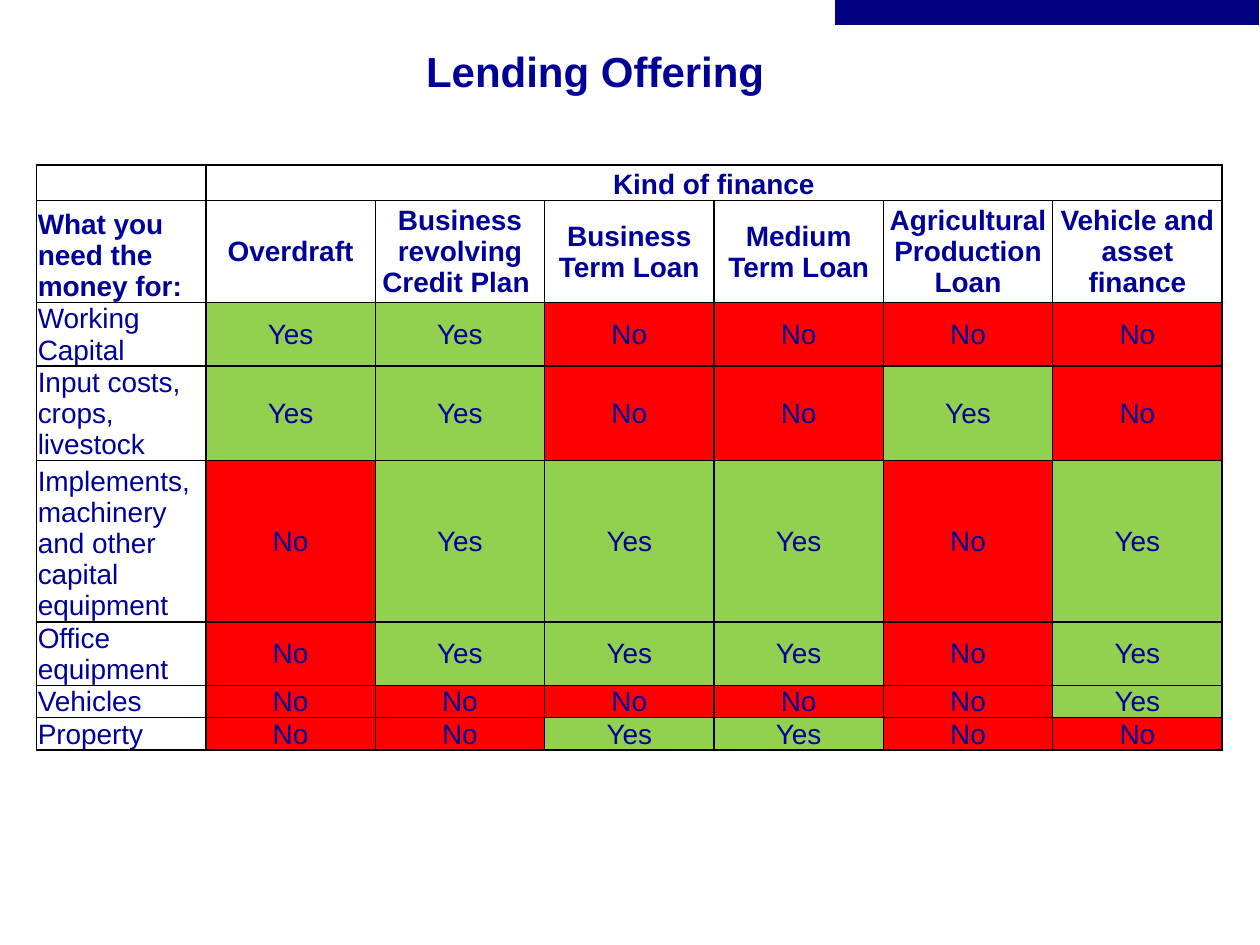
from lxml.etree import SubElement
from pptx import Presentation
from pptx.dml.color import RGBColor
from pptx.enum.shapes import MSO_SHAPE as Preset
from pptx.enum.text import MSO_ANCHOR as Anchor, PP_ALIGN as Align
from pptx.oxml.ns import qn
from pptx.util import Pt

COLORS = {"text": "000099", "bar": "000080", "white": "FFFFFF",
          "border": "000000", "Yes": "92D050", "No": "FF0000"}
COLUMN_WIDTH = 96.8
ROW_HEIGHTS = [18.7, 58.3, 23.8, 46.8, 92.2, 35.3, 14.4, 14.4]
MARGINS = {"margin_left": 0.7, "margin_right": 0.7, "margin_top": 0.7, "margin_bottom": 0}
PRODUCTS = ["Overdraft", "Business revolving Credit Plan ", "Business Term Loan",
            "Medium Term Loan", "Agricultural Production Loan", "Vehicle and asset finance"]
# Each need, with one Y or N per product
NEEDS = {
    "Working Capital": "YYNNNN",
    "Input costs, crops, livestock": "YYNNYN",
    "Implements, machinery and other capital equipment": "NYYYNY",
    "Office equipment": "NYYYNY",
    "Vehicles": "NNNNNY",
    "Property": "NNYYNN",
}
ANSWERS = {"Y": "Yes", "N": "No"}


def color(name):
    return RGBColor.from_string(COLORS[name])


def write(para, text, size, bold, align):
    para.alignment = align
    span = para.add_run()
    span.text = text
    for name, value in {"name": "Arial", "size": Pt(size), "bold": bold}.items():
        setattr(span.font, name, value)
    span.font.color.rgb = color("text")


def add_bar(page):
    bar = page.shapes.add_shape(Preset.RECTANGLE, Pt(476.6), Pt(-1.4), Pt(243.4), Pt(15.8))
    bar.shadow.inherit = False
    bar.fill.solid()
    bar.fill.fore_color.rgb = color("bar")
    bar.line.color.rgb = color("white")
    bar.line.width = Pt(0.75)


def set_title(page, text):
    box = page.shapes.title
    place = {"left": 123.8, "top": 21.6, "width": 432.7, "height": 37.4}
    for name, value in place.items():
        setattr(box, name, Pt(value))
    box.text_frame.vertical_anchor = Anchor.MIDDLE
    write(box.text_frame.paragraphs[0], text, 24, True, Align.CENTER)


def add_borders(cell):
    properties = cell._tc.get_or_add_tcPr()
    for side in ("lnL", "lnR", "lnT", "lnB"):
        line = SubElement(properties, qn(f"a:{side}"), w=str(Pt(1)))
        fill = SubElement(line, qn("a:solidFill"))
        SubElement(fill, qn("a:srgbClr"), val=COLORS["border"])


def fill_cell(cell, text, bold, align, anchor):
    for name, value in MARGINS.items():
        setattr(cell, name, Pt(value))
    cell.vertical_anchor = anchor
    add_borders(cell)
    if text in COLORS:
        cell.fill.solid()
        cell.fill.fore_color.rgb = color(text)
    else:
        cell.fill.background()
    para = cell.text_frame.paragraphs[0]
    if text:
        write(para, text, 16, bold, align)
    else:
        # Keep an empty cell from stretching its row
        SubElement(para._p, qn("a:endParaRPr"), sz="1600")


def add_matrix(page):
    rows = [["", "Kind of finance"] + [""] * 5,
            ["What you need the money for:"] + PRODUCTS]
    rows += [[need] + [ANSWERS[mark] for mark in marks] for need, marks in NEEDS.items()]
    count = len(rows[0])
    frame = page.shapes.add_table(len(rows), count, Pt(20.9), Pt(94.3),
                                  Pt(COLUMN_WIDTH * count), Pt(sum(ROW_HEIGHTS)))
    table = frame.table
    table.first_row = table.horz_banding = False
    for column in table.columns:
        column.width = Pt(COLUMN_WIDTH)
    for row, height in zip(table.rows, ROW_HEIGHTS):
        row.height = Pt(height)
    for r, texts in enumerate(rows):
        for c, text in enumerate(texts):
            align = Align.CENTER if c else Align.LEFT
            anchor = Anchor.MIDDLE if r and c else Anchor.BOTTOM
            fill_cell(table.cell(r, c), text, r < 2, align, anchor)
    table.cell(0, 1).merge(table.cell(0, count - 1))


def main():
    deck = Presentation()
    deck.slide_width, deck.slide_height = Pt(720), Pt(540)
    page = deck.slides.add_slide(deck.slide_layouts[5])
    add_bar(page)
    set_title(page, "Lending Offering")
    add_matrix(page)
    deck.save("out.pptx")


if __name__ == "__main__":
    main()
